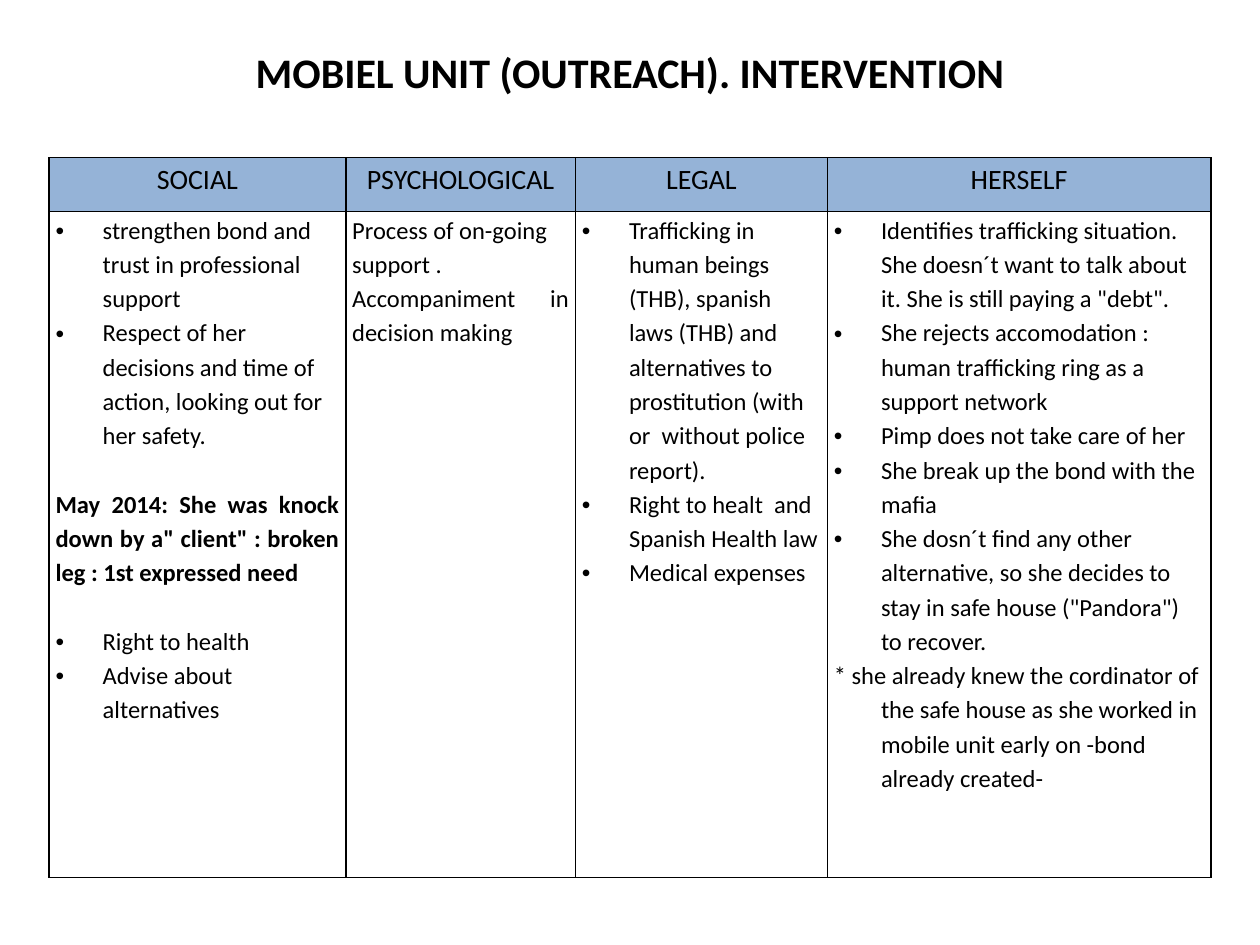
from lxml.etree import SubElement
from pptx import Presentation
from pptx.dml.color import RGBColor
from pptx.enum.text import MSO_ANCHOR, PP_ALIGN
from pptx.oxml.ns import qn
from pptx.util import Cm, Pt

TITLE = "MOBIEL UNIT (OUTREACH). INTERVENTION"
COLUMNS = [
    ("SOCIAL", 5.98, [
        ("bullet", "strengthen bond and trust in professional support"),
        ("bullet", "Respect of her decisions and time of action, looking out for her safety."),
        ("event", 'May 2014: She was knock down by a" client" : broken leg : 1st expressed need'),
        ("bullet", "Right to health"),
        ("bullet", "Advise about alternatives"),
    ]),
    ("PSYCHOLOGICAL", 4.63, [
        ("plain", "Process of on-going support ."),
        ("justified", "Accompaniment in decision making"),
    ]),
    ("LEGAL", 5.08, [
        ("bullet", "Trafficking in human beings (THB), spanish laws (THB) and alternatives "
                   "to prostitution (with or  without police report)."),
        ("bullet", "Right to healt  and Spanish Health law"),
        ("bullet", "Medical expenses"),
    ]),
    ("HERSELF", 7.73, [
        ("bullet", "Identifies trafficking situation. She doesn´t want to talk about it. "
                   'She is still paying a "debt".'),
        ("bullet", "She rejects accomodation : human trafficking ring as a support network"),
        ("bullet", "Pimp does not take care of her"),
        ("bullet", "She break up the bond with the mafia"),
        ("bullet", "She dosn´t find any other alternative, so she decides to stay in "
                   'safe house ("Pandora")  to recover.'),
        ("hanging", "* she already knew the cordinator of the safe house as she worked in "
                    "mobile unit early on -bond already created-"),
    ]),
]
ROW_HEIGHTS = (1.08, 13.43)
COLORS = {"text": "000000", "border": "000000", "header": "95B3D7"}
FONT = "Calibri"
INDENT = Cm(0.95)
BLANK_LINE = Pt(19.6)


def set_font(paragraph, size, bold=False):
    paragraph.font.name = FONT
    paragraph.font.size = Pt(size)
    paragraph.font.bold = bold
    paragraph.font.color.rgb = RGBColor.from_string(COLORS["text"])


def format_cell(cell, fill=None):
    cell.margin_left = cell.margin_right = Cm(0.13)
    cell.margin_top = cell.margin_bottom = 0
    properties = cell._tc.get_or_add_tcPr()
    for side in ("lnL", "lnR", "lnT", "lnB"):
        line = SubElement(properties, qn(f"a:{side}"), w=str(Pt(1)))
        solid = SubElement(line, qn("a:solidFill"))
        SubElement(solid, qn("a:srgbClr"), val=COLORS["border"])
    if fill:
        cell.fill.solid()
        cell.fill.fore_color.rgb = RGBColor.from_string(fill)
    else:
        cell.fill.background()


def write_paragraph(paragraph, kind, text):
    paragraph.text = text
    paragraph.line_spacing = 1.15
    justified = kind in ("event", "justified")
    paragraph.alignment = PP_ALIGN.JUSTIFY if justified else PP_ALIGN.LEFT
    if kind == "event":
        paragraph.space_before = paragraph.space_after = BLANK_LINE
    if kind in ("bullet", "hanging"):
        properties = paragraph._p.get_or_add_pPr()
        properties.set("marL", str(INDENT))
        properties.set("indent", str(-INDENT))
        if kind == "bullet":
            SubElement(properties, qn("a:buFont"), typeface="Arial")
            SubElement(properties, qn("a:buChar"), char="•")
    set_font(paragraph, 14, kind == "event")


presentation = Presentation()
presentation.slide_width = Cm(25.4)
presentation.slide_height = Cm(19.05)
slide = presentation.slides.add_slide(presentation.slide_layouts[5])

title = slide.shapes.title
title.left, title.top, title.width, title.height = 0, Cm(0.8), Cm(25.4), Cm(1.28)
title.text_frame.text = TITLE
title.text_frame.vertical_anchor = MSO_ANCHOR.MIDDLE
title.text_frame.paragraphs[0].alignment = PP_ALIGN.CENTER
set_font(title.text_frame.paragraphs[0], 24, True)

table_width = sum(width for _, width, _ in COLUMNS)
table = slide.shapes.add_table(
    2, len(COLUMNS), Cm(0.99), Cm(3.18), Cm(table_width), Cm(sum(ROW_HEIGHTS))
).table
for row, height in zip(table.rows, ROW_HEIGHTS):
    row.height = Cm(height)

for index, (heading, width, items) in enumerate(COLUMNS):
    table.columns[index].width = Cm(width)
    header, body = table.cell(0, index), table.cell(1, index)
    format_cell(header, COLORS["header"])
    format_cell(body)
    header.text = heading
    paragraph = header.text_frame.paragraphs[0]
    paragraph.alignment = PP_ALIGN.CENTER
    paragraph.line_spacing = 1.15
    set_font(paragraph, 16)
    frame = body.text_frame
    for number, (kind, text) in enumerate(items):
        paragraph = frame.add_paragraph() if number else frame.paragraphs[0]
        write_paragraph(paragraph, kind, text)

presentation.save("out.pptx")
